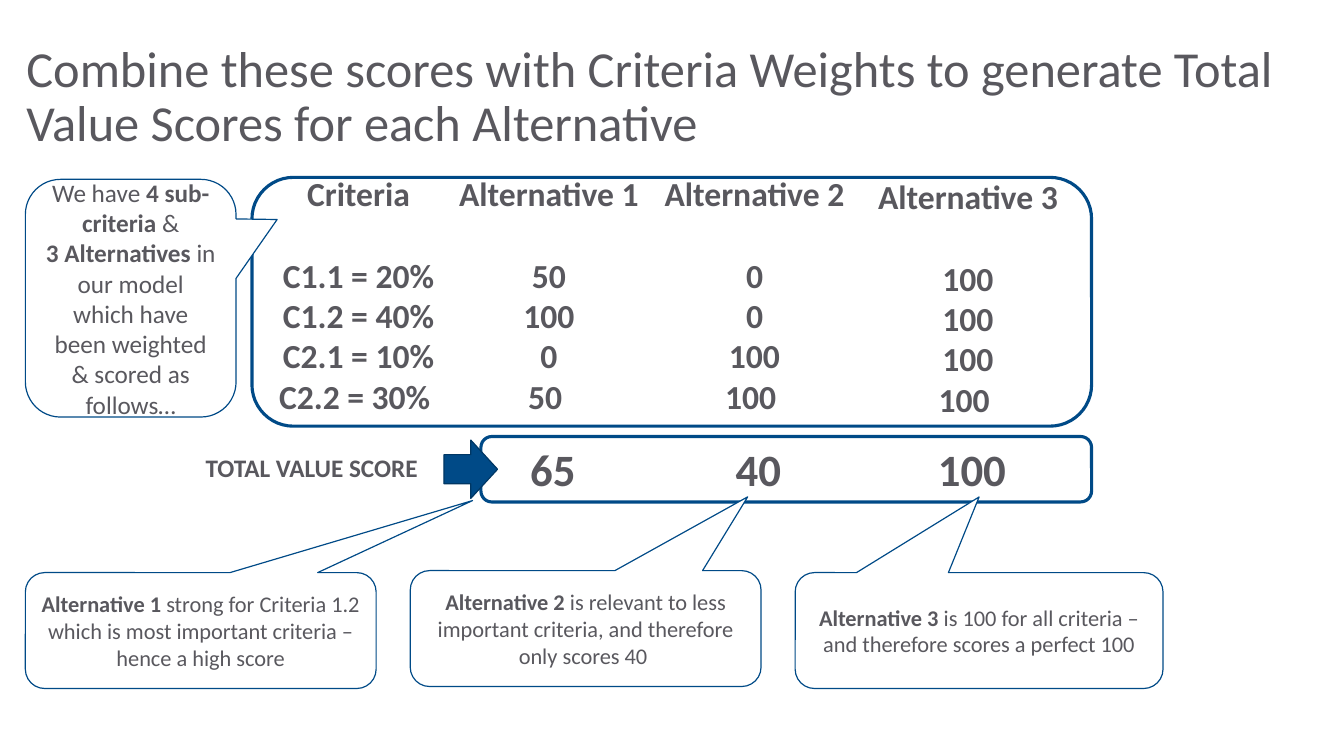
from lxml.etree import SubElement
from pptx import Presentation
from pptx.dml.color import RGBColor
from pptx.enum.shapes import MSO_SHAPE
from pptx.enum.text import MSO_ANCHOR, MSO_AUTO_SIZE, PP_ALIGN
from pptx.oxml.ns import qn
from pptx.util import Cm, Pt

COLORS = {"text": "59585E", "blue": "004A87", "dark_blue": "003764", "white": "FFFFFF"}
FONT = "Calibri"
TITLE = ("Combine these scores with Criteria Weights to generate "
         "Total Value Scores for each Alternative")
# Heading, left, top, width, values, total
COLUMNS = [
    ("Criteria", 6.76, 4.24, 4.55,
     ["C1.1 = 20%", "C1.2 = 40%", "C2.1 = 10%", "C2.2 = 30% "], None),
    ("Alternative 1", 11.28, 4.24, 5.11, ["50", "100", "0", "50 "], "65"),
    ("Alternative\u00a02", 16.46, 4.24, 5.11, ["0", "0", "100", "100 "], "40"),
    ("Alternative\u00a03", 21.84, 4.32, 5.11, ["100", "100", "100", "100 "], "100"),
]
# Top, width, pointer position, bold lead, remaining text
NOTES = [
    (14.43, 8.84, (0.775, -1.122), "Alternative\u00a01 ",
     "strong for Criteria 1.2 which is most important criteria – hence a high score"),
    (14.38, 8.84, (0.462, -1.137), "Alternative\u00a02 ",
     "is relevant to less important criteria, and therefore only scores 40\u00a0"),
    (14.43, 9.27, (0, -1.153), "Alternative\u00a03 ",
     "is 100 for all criteria – and therefore scores a perfect 100"),
]
INTRO = [("We have ", False), ("4 sub-criteria ", True), ("& ", False),
         ("3\u00a0Alternatives\u00a0", True),
         ("in our model which have been weighted & scored as follows…", False)]


def color(name):
    return RGBColor.from_string(COLORS[name])


def format_paragraph(paragraph, size, bold=None, align=PP_ALIGN.CENTER):
    paragraph.alignment = align
    paragraph.font.name = FONT
    paragraph.font.size = Pt(size)
    paragraph.font.bold = bold
    paragraph.font.color.rgb = color("text")


def add_box(slide, kind, box, fill=None, line="blue", width=0.85):
    shape = slide.shapes.add_shape(kind, *map(Cm, box))
    shape.shadow.inherit = False
    if fill:
        shape.fill.solid()
        shape.fill.fore_color.rgb = color(fill)
    else:
        shape.fill.background()
    shape.line.color.rgb = color(line)
    shape.line.width = Pt(width)
    return shape


def add_label(slide, box, lines, size, align=PP_ALIGN.CENTER, wrap=False):
    frame = slide.shapes.add_textbox(*map(Cm, box)).text_frame
    frame.word_wrap = wrap
    frame.text = "\n".join(lines)
    for paragraph in frame.paragraphs:
        format_paragraph(paragraph, size, True, align)
    return frame


def add_callout(slide, box, pointer, runs, size):
    shape = add_box(slide, MSO_SHAPE.ROUNDED_RECTANGULAR_CALLOUT, box, "white")
    shape.adjustments[0], shape.adjustments[1] = pointer
    frame = shape.text_frame
    frame.word_wrap = True
    frame.vertical_anchor = MSO_ANCHOR.MIDDLE
    paragraph = frame.paragraphs[0]
    format_paragraph(paragraph, size)
    for text, bold in runs:
        run = paragraph.add_run()
        run.text = text
        run.font.bold = bold


def add_title(slide, box):
    title = slide.shapes.title
    title.left, title.top, title.width, title.height = map(Cm, box)
    title.fill.solid()
    title.fill.fore_color.rgb = color("white")
    white = title.fill._xPr.find(".//" + qn("a:srgbClr"))
    SubElement(white, qn("a:alpha"), val="70000")
    frame = title.text_frame
    frame.text = TITLE
    frame.word_wrap = True
    frame.auto_size = MSO_AUTO_SIZE.NONE
    frame.vertical_anchor = MSO_ANCHOR.MIDDLE
    frame.paragraphs[0].line_spacing = 0.9
    format_paragraph(frame.paragraphs[0], 36, align=PP_ALIGN.LEFT)


def add_scores(slide, box):
    for heading, left, top, width, values, _ in COLUMNS:
        frame = add_label(slide, (left, top, width, 6.4), [heading, *values], 24)
        frame.paragraphs[1].space_before = Pt(29.3)
    add_box(slide, MSO_SHAPE.ROUNDED_RECTANGLE, box, width=2.25)


def add_totals(slide, box):
    left, top, width, height = box
    for _, column_left, _, column_width, _, total in COLUMNS:
        if total:
            add_label(slide, (column_left + 0.1, top, column_width, height), [total], 32)
    add_box(slide, MSO_SHAPE.ROUNDED_RECTANGLE, box, width=2.25)
    add_label(slide, (left - 7.19, top + 0.28, 7.62, 1.02), ["TOTAL VALUE SCORE"], 18,
              PP_ALIGN.LEFT, True)
    add_box(slide, MSO_SHAPE.RIGHT_ARROW, (left - 0.93, top + 0.09, 1.35, 1.47),
            "blue", "dark_blue")


def add_notes(slide, left, pitch):
    for index, (top, width, pointer, lead, rest) in enumerate(NOTES):
        add_callout(slide, (left + index * pitch, top, width, 2.92), pointer,
                    [(lead, True), (rest, False)], 16)


def main():
    presentation = Presentation()
    presentation.slide_width, presentation.slide_height = Cm(33.87), Cm(19.05)
    slide = presentation.slides.add_slide(presentation.slide_layouts[5])
    add_title(slide, (0.41, 0.23, 33.3, 4.5))
    add_scores(slide, (6.35, 4.47, 21.16, 6.27))
    add_totals(slide, (12.12, 11, 15.39, 1.65))
    add_notes(slide, 0.64, 9.7)
    add_callout(slide, (0.64, 4.52, 5.31, 5.99), (0.695, -0.331), INTRO, 18)
    presentation.save("out.pptx")


if __name__ == "__main__":
    main()
